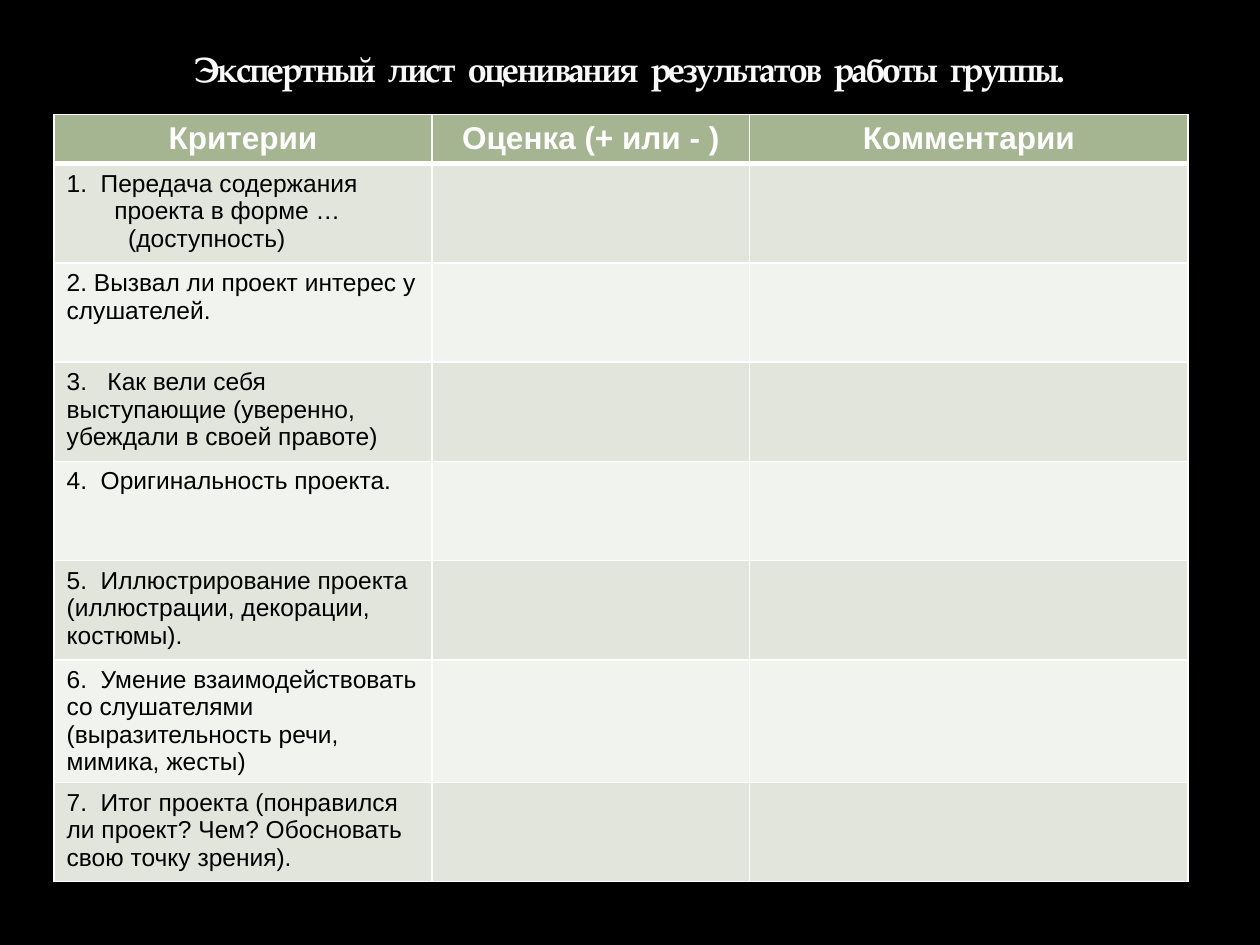
from lxml import etree
from pptx import Presentation
from pptx.dml.color import RGBColor
from pptx.enum.text import MSO_ANCHOR, PP_ALIGN
from pptx.oxml.ns import qn
from pptx.util import Cm, Pt

CENTER, LEFT = PP_ALIGN.CENTER, PP_ALIGN.LEFT
BOTTOM = MSO_ANCHOR.BOTTOM

# Content
TITLE = "Экспертный  лист  оценивания  результатов  работы  группы."
HEADERS = ["Критерии", "Оценка (+ или - )", "Комментарии"]
# Each criterion is a list of (text, left margin in cm, first-line indent in cm)
CRITERIA = [
    [("1.  Передача содержания проекта в форме …", 0.96, -0.96),
     ("(доступность)", 1.24, 0)],
    [("2. Вызвал ли проект интерес у слушателей.", 0, 0)],
    [("3.   Как вели себя выступающие (уверенно, убеждали в своей правоте)", 0, 0)],
    [("4.  Оригинальность проекта.", 0, 0)],
    [("5.  Иллюстрирование проекта (иллюстрации, декорации, костюмы).", 0, 0)],
    [("6.  Умение взаимодействовать со слушателями "
      "(выразительность речи, мимика, жесты)", 0, 0)],
    [("7.  Итог проекта (понравился ли проект? Чем? "
      "Обосновать свою точку зрения).", 0, 0)],
]

THEME = {
    "background": "000000", "title": "F9F9F9", "outline": "3C4422",
    "header_fill": "A5B592", "header_text": "FFFFFF",
    "bands": ["E1E5DC", "F0F3EE"], "text": "000000", "border": "FFFFFF",
    "title_font": "TeX Gyre Pagella", "table_font": "Arial",
    "title_size": 20, "header_size": 18, "text_size": 14,
}
COLUMN_WIDTHS = [7.62, 6.4, 8.84]
HEADER_HEIGHT, ROW_HEIGHT = 0.99, 2


def add_span(para, text, font, size, color, bold):
    span = para.add_run()
    span.text = text
    span.font.name = font
    span.font.size = Pt(size)
    span.font.bold = bold
    span.font.color.rgb = RGBColor.from_string(color)
    return span


def add_color(parent, color):
    fill = etree.SubElement(parent, qn("a:solidFill"))
    return etree.SubElement(fill, qn("a:srgbClr"), val=color)


def style_cell(cell, fill_color, bottom_width=1):
    cell.fill.solid()
    cell.fill.fore_color.rgb = RGBColor.from_string(fill_color)
    properties = cell._tc.get_or_add_tcPr()
    widths = {"lnL": 1, "lnR": 1, "lnT": 1, "lnB": bottom_width}
    for position, (side, width) in enumerate(widths.items()):
        line = etree.Element(qn(f"a:{side}"), w=str(Pt(width)))
        add_color(line, THEME["border"])
        properties.insert(position, line)


# Slide
deck = Presentation()
deck.slide_width, deck.slide_height = Cm(25.4), Cm(19.05)
page = deck.slides.add_slide(deck.slide_layouts[5])
page.background.fill.solid()
page.background.fill.fore_color.rgb = RGBColor.from_string(THEME["background"])

# Criteria table
frame = page.shapes.add_table(
    len(CRITERIA) + 1, len(HEADERS), Cm(1.09), Cm(2.31),
    Cm(sum(COLUMN_WIDTHS)), Cm(HEADER_HEIGHT + ROW_HEIGHT * len(CRITERIA)))
table = frame.table
for column, width in zip(table.columns, COLUMN_WIDTHS):
    column.width = Cm(width)
for index, row in enumerate(table.rows):
    row.height = Cm(ROW_HEIGHT if index else HEADER_HEIGHT)

# Header row
for index, text in enumerate(HEADERS):
    cell = table.cell(0, index)
    style_cell(cell, THEME["header_fill"], bottom_width=3)
    para = cell.text_frame.paragraphs[0]
    para.alignment = CENTER
    add_span(para, text, THEME["table_font"], THEME["header_size"],
             THEME["header_text"], True)

# Criteria rows, with alternating bands
for index, lines in enumerate(CRITERIA):
    for column in range(len(HEADERS)):
        style_cell(table.cell(index + 1, column), THEME["bands"][index % 2])
    text_frame = table.cell(index + 1, 0).text_frame
    for number, (text, margin, indent) in enumerate(lines):
        para = text_frame.add_paragraph() if number else text_frame.paragraphs[0]
        para.alignment = LEFT
        properties = para._p.get_or_add_pPr()
        properties.set("marL", str(Cm(margin)))
        properties.set("indent", str(Cm(indent)))
        add_span(para, text, THEME["table_font"], THEME["text_size"],
                 THEME["text"], False)

# Title, with tight letter spacing and a faint outline
title = page.shapes.title
title.left, title.top, title.width, title.height = Cm(1.27), Cm(0.43), Cm(22.86), Cm(1.5)
title.text_frame.vertical_anchor = BOTTOM
para = title.text_frame.paragraphs[0]
para.alignment = CENTER
span = add_span(para, TITLE, THEME["title_font"], THEME["title_size"],
                THEME["title"], True)
properties = span._r.get_or_add_rPr()
properties.set("spc", "-100")
outline = etree.Element(qn("a:ln"), w=str(Pt(0.25)))
outline_color = add_color(outline, THEME["outline"])
etree.SubElement(outline_color, qn("a:alpha"), val="25000")
properties.insert(0, outline)

deck.save("out.pptx")
